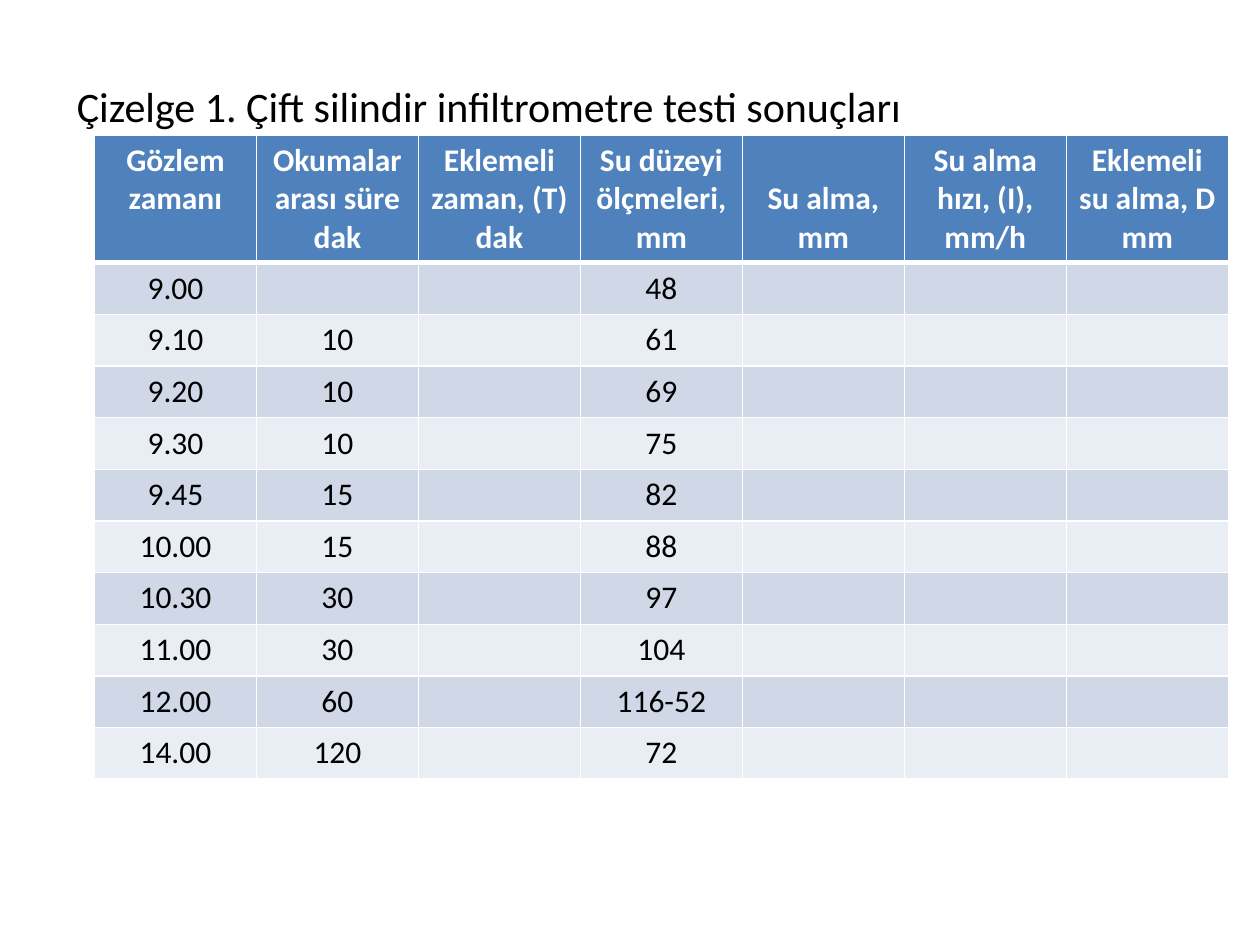
"""Build the slide with the double-ring infiltrometer test results table."""
from dataclasses import dataclass

from lxml.etree import SubElement
from pptx import Presentation
from pptx.dml.color import RGBColor
from pptx.enum.text import MSO_ANCHOR as Anchor, PP_ALIGN as Align
from pptx.oxml.ns import qn
from pptx.util import Inches, Pt


@dataclass(frozen=True)
class Theme:
    font: str = "Calibri"
    ink: str = "000000"
    white: str = "FFFFFF"
    header: str = "4F81BD"
    bands: tuple = ("D0D8E8", "E9EDF4")
    title_size: int = 24
    table_size: int = 18
    thin: int = 1
    thick: int = 3


theme = Theme()


def add_text(paragraph, text, size, color, align, bold=False):
    paragraph.alignment = align
    run = paragraph.add_run()
    run.text = text
    run.font.name = theme.font
    run.font.size = Pt(size)
    run.font.bold = bold
    run.font.color.rgb = RGBColor.from_string(color)


def set_borders(cell, top, bottom):
    properties = cell._tc.get_or_add_tcPr()
    widths = {"a:lnL": theme.thin, "a:lnR": theme.thin, "a:lnT": top, "a:lnB": bottom}
    for position, (side, width) in enumerate(widths.items()):
        line = SubElement(properties, qn(side), w=str(Pt(width)))
        fill = SubElement(line, qn("a:solidFill"))
        SubElement(fill, qn("a:srgbClr"), val=theme.white)
        properties.insert(position, line)


headings = [
    ["Gözlem zamanı"],
    ["Okumalar arası süre", "dak"],
    ["Eklemeli zaman, (T)", "dak"],
    ["Su düzeyi ölçmeleri, mm"],
    ["Su alma, mm"],
    ["Su alma hızı, (I), mm/h"],
    ["Eklemeli su alma, D mm"],
]
readings = [
    ("9.00", "", "48"),
    ("9.10", "10", "61"),
    ("9.20", "10", "69"),
    ("9.30", "10", "75"),
    ("9.45", "15", "82"),
    ("10.00", "15", "88"),
    ("10.30", "30", "97"),
    ("11.00", "30", "104"),
    ("12.00", "60", "116-52"),
    ("14.00", "120", "72"),
]
reading_columns = (0, 1, 3)
header_height, row_height = Inches(1.01), Inches(0.41)

prs = Presentation()
prs.slide_width, prs.slide_height = Inches(10), Inches(7.5)
slide = prs.slides.add_slide(prs.slide_layouts[5])

title = slide.shapes.title
title.left, title.top = Inches(0.51), Inches(0.6)
title.width, title.height = Inches(9), Inches(0.48)
title.text_frame.vertical_anchor = Anchor.MIDDLE
add_text(title.text_frame.paragraphs[0],
         "Çizelge 1. Çift silindir infiltrometre testi sonuçları",
         theme.title_size, theme.ink, Align.LEFT)

results = slide.shapes.add_table(
    len(readings) + 1, len(headings), Inches(0.75), Inches(1.07),
    Inches(9), header_height + row_height * len(readings)).table
results.horz_banding = False
results.rows[0].height = header_height

for column, lines in enumerate(headings):
    cell = results.cell(0, column)
    cell.fill.solid()
    cell.fill.fore_color.rgb = RGBColor.from_string(theme.header)
    set_borders(cell, theme.thin, theme.thick)
    for number, line in enumerate(lines):
        frame = cell.text_frame
        paragraph = frame.add_paragraph() if number else frame.paragraphs[0]
        add_text(paragraph, line, theme.table_size, theme.white, Align.CENTER, bold=True)
results.cell(0, 4).vertical_anchor = Anchor.BOTTOM

for row, reading in enumerate(readings, start=1):
    results.rows[row].height = row_height
    values = dict(zip(reading_columns, reading))
    for column in range(len(headings)):
        cell = results.cell(row, column)
        cell.fill.solid()
        cell.fill.fore_color.rgb = RGBColor.from_string(theme.bands[(row - 1) % 2])
        set_borders(cell, theme.thick if row == 1 else theme.thin, theme.thin)
        if values.get(column):
            add_text(cell.text_frame.paragraphs[0], values[column],
                     theme.table_size, theme.ink, Align.CENTER)

prs.save("out.pptx")
